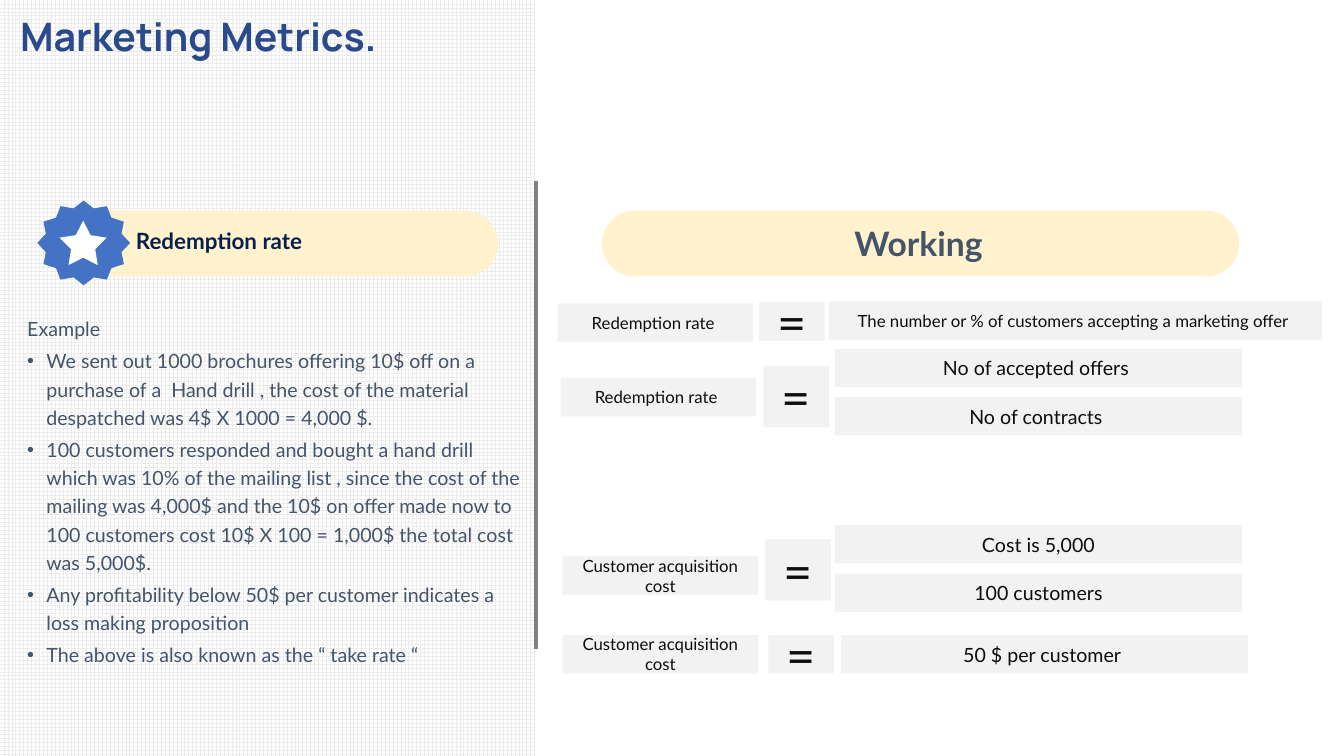
from dataclasses import dataclass

from lxml import etree
from pptx import Presentation
from pptx import util as u
from pptx.dml.color import RGBColor
from pptx.enum import dml, shapes, text
from pptx.oxml.ns import qn

COLUMNS, ROWS = 133.3, 75  # grid cells of a tenth of an inch
CELL = u.Inches(0.1)
PITCH = 4.8  # rows between stacked results
CELL_HEIGHT = 3.8
LABEL_WIDTH, EQUALS_WIDTH = 19.4, 6.5


@dataclass(frozen=True)
class Theme:
    heading_font: str = "Manrope"
    body_font: str = "Lato"
    title: str = "2A4A8B"
    body: str = "44546A"
    badge_text: str = "08204D"
    formula_text: str = "0D0D0D"
    pill: str = "FFF2CC"
    badge: str = "4472C4"
    cell: str = "F2F2F2"
    grid: str = "ECECEC"
    white: str = "FFFFFF"
    divider: str = "808080"
    title_size: float = 28
    heading_size: float = 24
    badge_size: float = 16
    body_size: float = 14
    label_size: float = 12
    equals_size: float = 36


THEME = Theme()

EXAMPLE = [
    "Example",
    "We sent out 1000 brochures offering 10$ off on a purchase of a  Hand drill , "
    "the cost of the material despatched was 4$ X 1000 = 4,000 $.",
    "100 customers responded and bought a hand drill which was 10% of the mailing list , "
    "since the cost of the mailing was 4,000$ and the 10$ on offer made now to 100 customers "
    "cost 10$ X 100 = 1,000$ the total cost was 5,000$.",
    "Any profitability below 50$ per customer indicates a loss making proposition",
    "The above is also known as the “ take rate “",
]

# label, its (column, row); equals (column, row, height);
# results, first (column, row, width), type size
FORMULAS = [
    ("Redemption rate ", (55.3, 30.1), (75.3, 30, CELL_HEIGHT),
     ["The number or % of customers accepting a marketing offer "],
     (82.2, 29.9, 48.9), THEME.label_size),
    ("Redemption rate ", (55.6, 37.5), (75.7, 36.3, 6.1),
     ["No of accepted offers ", "No of contracts "],
     (82.8, 34.6, 40.4), THEME.body_size),
    ("Customer acquisition cost", (55.8, 55.2), (75.9, 53.5, 6.1),
     ["Cost is 5,000", "100 customers"],
     (82.8, 52.1, 40.4), THEME.body_size),
    ("Customer acquisition cost", (55.8, 63), (76.2, 63, CELL_HEIGHT),
     ["50 $ per customer "],
     (83.4, 63, 40.4), THEME.body_size),
]


def cells(*counts):
    return [round(count * CELL) for count in counts]


def apply(target, values):
    for name, value in values.items():
        setattr(target, name, value)


def format_font(para, size, color, bold=False, name=THEME.body_font):
    for span in para.runs:
        apply(span.font, {"name": name, "size": u.Pt(size), "bold": bold})
        span.font.color.rgb = RGBColor.from_string(color)


def write(box, words, size, color, align=text.PP_ALIGN.CENTER,
          anchor=text.MSO_ANCHOR.MIDDLE, wrap=True, **font):
    frame = box.text_frame
    apply(frame, {"word_wrap": wrap, "vertical_anchor": anchor,
                  "auto_size": text.MSO_AUTO_SIZE.NONE})
    frame.text = words
    para = frame.paragraphs[0]
    para.alignment = align
    format_font(para, size, color, **font)


def add_plain(parent, kind, place, color):
    """Add a filled preset shape without outline or shadow."""
    shape = parent.add_shape(kind, *cells(*place))
    shape.shadow.inherit = False
    shape.fill.solid()
    shape.fill.fore_color.rgb = RGBColor.from_string(color)
    shape.line.fill.background()
    return shape


def add_pill(parent, place):
    pill = add_plain(parent, shapes.MSO_SHAPE.ROUNDED_RECTANGLE, place, THEME.pill)
    pill.adjustments[0] = 0.5


def add_cell(page, place, words, size):
    box = add_plain(page.shapes, shapes.MSO_SHAPE.RECTANGLE, place, THEME.cell)
    write(box, words, size, THEME.formula_text)


def add_formula(page, label, label_at, equals, results, first, size):
    add_cell(page, (*label_at, LABEL_WIDTH, CELL_HEIGHT), label, THEME.label_size)
    column, row, height = equals
    add_cell(page, (column, row, EQUALS_WIDTH, height), "=", THEME.equals_size)
    column, row, width = first
    for step, words in enumerate(results):
        add_cell(page, (column, row + step * PITCH, width, CELL_HEIGHT), words, size)


def add_panel(page):
    """Put the patterned left panel behind everything else."""
    panel = add_plain(page.shapes, shapes.MSO_SHAPE.RECTANGLE, (0, 0, 53.1, ROWS), THEME.white)
    panel.fill.patterned()
    panel.fill.pattern = dml.MSO_PATTERN.LARGE_GRID
    panel.fill.fore_color.rgb = RGBColor.from_string(THEME.grid)
    panel.fill.back_color.rgb = RGBColor.from_string(THEME.white)
    page.shapes.element.insert(2, panel.element)


def place_box(box, place):
    apply(box, dict(zip(("left", "top", "width", "height"), cells(*place))))


def set_bullet(para, indent, mark=None):
    properties = para._p.get_or_add_pPr()
    properties.set("marL", str(u.Inches(indent)))
    properties.set("indent", str(-u.Inches(indent)))
    if mark:
        font = etree.SubElement(properties, qn("a:buFont"))
        font.set("typeface", "Arial")
        etree.SubElement(properties, qn("a:buChar")).set("char", mark)
    else:
        etree.SubElement(properties, qn("a:buNone"))


def fill_body(box):
    place_box(box, (1.7, 30.5, 51.4, 43.2))
    frame = box.text_frame
    apply(frame, {"word_wrap": True, "auto_size": text.MSO_AUTO_SIZE.NONE,
                  "vertical_anchor": text.MSO_ANCHOR.TOP})
    for number, words in enumerate(EXAMPLE):
        para = frame.add_paragraph() if number else frame.paragraphs[0]
        para.text = words
        set_bullet(para, 0.19 if number else 0, "•" if number else None)
        apply(para, {"line_spacing": 1.2, "space_before": u.Pt(2.8 if number else 0),
                     "alignment": text.PP_ALIGN.LEFT})
        format_font(para, THEME.body_size, THEME.body)


def add_badge(page):
    group = page.shapes.add_group_shape().shapes
    add_pill(group, (5.2, 20.9, 44.2, 6.5))
    seal = add_plain(group, shapes.MSO_SHAPE.STAR_12_POINT, (3.7, 19.9, 9.2, 8.4), THEME.badge)
    seal.adjustments[0] = 0.422
    star = add_plain(group, shapes.MSO_SHAPE.STAR_5_POINT, (5.9, 21.9, 4.7, 4.4), THEME.white)
    star.adjustments[0] = 0.254
    label = group.add_textbox(*cells(12.5, 22, 18.5, 3.7))
    write(label, "Redemption rate", THEME.badge_size, THEME.badge_text,
          align=text.PP_ALIGN.LEFT, wrap=False, bold=True)


def add_divider(page):
    line = page.shapes.add_connector(shapes.MSO_CONNECTOR.STRAIGHT, *cells(53.2, 18, 53.2, 64.4))
    line.line.width = u.Pt(3)
    line.line.color.rgb = RGBColor.from_string(THEME.divider)
    etree.SubElement(line.element.spPr, qn("a:effectLst"))


def main():
    deck = Presentation()
    deck.slide_width, deck.slide_height = cells(COLUMNS, ROWS)
    page = deck.slides.add_slide(deck.slide_layouts[1])
    add_panel(page)
    title = page.shapes.title
    place_box(title, (1, 0.7, 42.2, 5.7))
    write(title, "Marketing Metrics.", THEME.title_size, THEME.title,
          align=text.PP_ALIGN.LEFT, anchor=text.MSO_ANCHOR.TOP,
          bold=True, name=THEME.heading_font)
    fill_body(page.placeholders[1])
    add_pill(page.shapes, (59.7, 20.9, 63.2, 6.5))
    heading = page.shapes.add_textbox(*cells(62.4, 21.6, 58.2, 5))
    write(heading, "Working ", THEME.heading_size, THEME.body,
          anchor=text.MSO_ANCHOR.BOTTOM, bold=True)
    add_divider(page)
    add_badge(page)
    for formula in FORMULAS:
        add_formula(page, *formula)
    deck.save("out.pptx")


if __name__ == "__main__":
    main()
